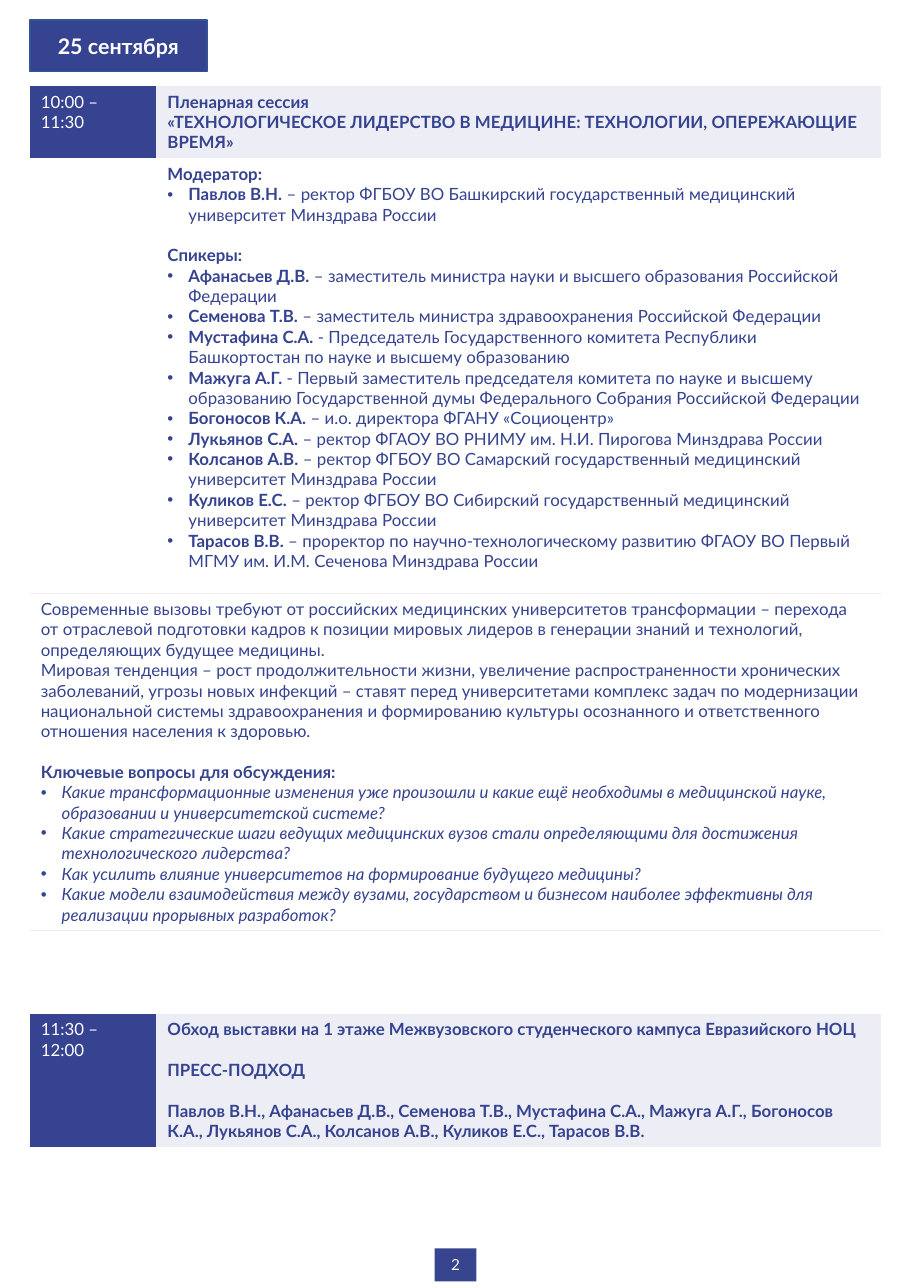
from dataclasses import dataclass
from lxml import etree
from pptx import Presentation
from pptx import util as u
from pptx.dml.color import RGBColor
from pptx.enum import shapes, text
from pptx.oxml import ns


@dataclass(frozen=True)
class Theme:
    font: str = "Lato"
    navy: str = "354390"
    edge: str = "325491"
    badge: str = "36458E"
    pale: str = "EDEEF5"
    white: str = "FFFFFF"
    body: int = 11
    date: int = 14
    page: int = 10


@dataclass(frozen=True)
class Para:
    lead: str = ""
    rest: str = ""
    italic: bool = False
    bullet: bool = False
    gap: bool = False


THEME = Theme()
WIDTH, HEIGHT = 8.27, 11.69
MARGIN = 0.27
COLUMNS = (1.15, 6.58)
LINE_PT = THEME.body * 1.2
LINE = LINE_PT / 72
CELL_PAD = 0.1
NO_GRID_STYLE = "{2D5ABB26-0587-4C30-8999-92F81FD0307C}"

SESSION = [
    Para("Пленарная сессия"),
    Para("«ТЕХНОЛОГИЧЕСКОЕ ЛИДЕРСТВО В МЕДИЦИНЕ: ТЕХНОЛОГИИ, ОПЕРЕЖАЮЩИЕ ВРЕМЯ»"),
]
MODERATORS = [
    ("Павлов В.Н.", " – ректор ФГБОУ ВО Башкирский государственный медицинский университет Минздрава России"),
]
SPEAKERS = [
    ("Афанасьев Д.В.", " – заместитель министра науки и высшего образования Российской Федерации"),
    ("Семенова Т.В.", " – заместитель министра здравоохранения Российской Федерации"),
    ("Мустафина С.А.", " - Председатель Государственного комитета Республики Башкортостан по науке и высшему образованию"),
    ("Мажуга А.Г.", " - Первый заместитель председателя комитета по науке и высшему образованию Государственной думы Федерального Собрания Российской Федерации"),
    ("Богоносов К.А.", " – и.о. директора ФГАНУ «Социоцентр»"),
    ("Лукьянов С.А.", " – ректор ФГАОУ ВО РНИМУ им. Н.И. Пирогова Минздрава России"),
    ("Колсанов А.В.", " – ректор ФГБОУ ВО Самарский государственный медицинский университет Минздрава России"),
    ("Куликов Е.С.", " – ректор ФГБОУ ВО Сибирский государственный медицинский университет Минздрава России"),
    ("Тарасов В.В.", " – проректор по научно-технологическому развитию ФГАОУ ВО Первый МГМУ им. И.М. Сеченова Минздрава России"),
]
CONTEXT = [
    "Современные вызовы требуют от российских медицинских университетов трансформации – перехода от отраслевой подготовки кадров к позиции мировых лидеров в генерации знаний и технологий, определяющих будущее медицины.",
    "Мировая тенденция – рост продолжительности жизни, увеличение распространенности хронических заболеваний, угрозы новых инфекций – ставят перед университетами комплекс задач по модернизации национальной системы здравоохранения и формированию культуры осознанного и ответственного отношения населения к здоровью.",
]
QUESTIONS = [
    "Какие трансформационные изменения уже произошли и какие ещё необходимы в медицинской науке, образовании и университетской системе?",
    "Какие стратегические шаги ведущих медицинских вузов стали определяющими для достижения технологического лидерства?",
    "Как усилить влияние университетов на формирование будущего медицины?",
    "Какие модели взаимодействия между вузами, государством и бизнесом наиболее эффективны для реализации прорывных разработок?",
]
TOUR = [
    Para("Обход выставки на 1 этаже Межвузовского студенческого кампуса Евразийского НОЦ"),
    Para("ПРЕСС-ПОДХОД", gap=True),
    Para("Павлов В.Н., " + ", ".join(name for name, _ in SPEAKERS), gap=True),
]


def color(code):
    return RGBColor.from_string(code)


def style_run(run, size, code, bold=False, italic=False):
    run.font.name = THEME.font
    run.font.size = u.Pt(size)
    run.font.color.rgb = color(code)
    run.font.bold = bold
    run.font.italic = italic


def add_bullet(paragraph):
    props = paragraph._p.get_or_add_pPr()
    indent = u.Inches(0.19)
    props.set("marL", str(indent))
    props.set("indent", str(-indent))
    etree.SubElement(props, ns.qn("a:buFont"), typeface="Arial")
    etree.SubElement(props, ns.qn("a:buChar"), char="•")


def write_cell(cell, paras, ink=THEME.navy):
    frame = cell.text_frame
    for index, para in enumerate(paras):
        paragraph = frame.add_paragraph() if index else frame.paragraphs[0]
        if para.gap:
            paragraph.space_before = u.Pt(LINE_PT)
        if para.bullet:
            add_bullet(paragraph)
        for words, bold in ((para.lead, True), (para.rest, False)):
            if words:
                run = paragraph.add_run()
                run.text = words
                style_run(run, THEME.body, ink, bold, para.italic)


def fill_cell(cell, code):
    cell.fill.solid()
    cell.fill.fore_color.rgb = color(code)


def rule_cell(cell, *sides):
    props = cell._tc.get_or_add_tcPr()
    for position, side in enumerate(sides):
        line = etree.Element(ns.qn(f"a:ln{side}"), w=str(u.Pt(1)))
        solid = etree.SubElement(line, ns.qn("a:solidFill"))
        etree.SubElement(solid, ns.qn("a:srgbClr"), val=THEME.pale)
        props.insert(position, line)


def add_schedule(slide, top, line_counts):
    heights = [count * LINE + CELL_PAD for count in line_counts]
    frame = slide.shapes.add_table(
        len(heights), len(COLUMNS), u.Inches(MARGIN), u.Inches(top),
        u.Inches(sum(COLUMNS)), u.Inches(sum(heights)))
    table = frame.table
    table.first_row = table.horz_banding = False
    table._tbl.tblPr.find(ns.qn("a:tableStyleId")).text = NO_GRID_STYLE
    for column, width in zip(table.columns, COLUMNS):
        column.width = u.Inches(width)
    for row, height in zip(table.rows, heights):
        row.height = u.Inches(height)
    return table


def add_heading_row(table, time, paras):
    slot, topic = table.cell(0, 0), table.cell(0, 1)
    fill_cell(slot, THEME.navy)
    fill_cell(topic, THEME.pale)
    write_cell(slot, [Para(rest=time)], THEME.white)
    write_cell(topic, paras)


def add_badge(slide, words, left, top, width, height, size, fill, edge=None, bold=False):
    badge = slide.shapes.add_shape(
        shapes.MSO_SHAPE.RECTANGLE, *map(u.Inches, (left, top, width, height)))
    badge.shadow.inherit = False
    badge.fill.solid()
    badge.fill.fore_color.rgb = color(fill)
    if edge:
        badge.line.color.rgb = color(edge)
        badge.line.width = u.Pt(1)
    else:
        badge.line.fill.background()
    frame = badge.text_frame
    frame.text = words
    frame.vertical_anchor = text.MSO_ANCHOR.MIDDLE
    frame.paragraphs[0].alignment = text.PP_ALIGN.CENTER
    style_run(frame.paragraphs[0].runs[0], size, THEME.white, bold)


def add_plenary(slide):
    table = add_schedule(slide, 0.78, (3, 21, 16))
    add_heading_row(table, "10:00 – 11:30", SESSION)

    blank, people = table.cell(1, 0), table.cell(1, 1)
    for cell in (blank, people):
        fill_cell(cell, THEME.white)
        rule_cell(cell, "B")
    write_cell(people, [
        Para("Модератор:"),
        *(Para(name, post, bullet=True) for name, post in MODERATORS),
        Para("Спикеры:", gap=True),
        *(Para(name, post, bullet=True) for name, post in SPEAKERS),
    ])

    agenda = table.cell(2, 0)
    agenda.merge(table.cell(2, 1))
    for cell in (agenda, table.cell(2, 1)):
        fill_cell(cell, THEME.white)
        rule_cell(cell, "T", "B")
    write_cell(agenda, [
        *(Para(rest=words) for words in CONTEXT),
        Para("Ключевые вопросы для обсуждения:", gap=True),
        *(Para(rest=words, italic=True, bullet=True) for words in QUESTIONS),
    ])


def main():
    deck = Presentation()
    deck.slide_width, deck.slide_height = u.Inches(WIDTH), u.Inches(HEIGHT)
    slide = deck.slides.add_slide(deck.slide_layouts[6])
    add_plenary(slide)
    add_badge(slide, "25 сентября", MARGIN, 0.18, 1.61, 0.47,
              THEME.date, THEME.navy, THEME.edge, bold=True)
    add_badge(slide, "2", (WIDTH - 0.38) / 2, 11.33, 0.38, 0.3, THEME.page, THEME.badge)
    add_heading_row(add_schedule(slide, 9.2, (6,)), "11:30 – 12:00", TOUR)
    deck.save("out.pptx")


if __name__ == "__main__":
    main()
